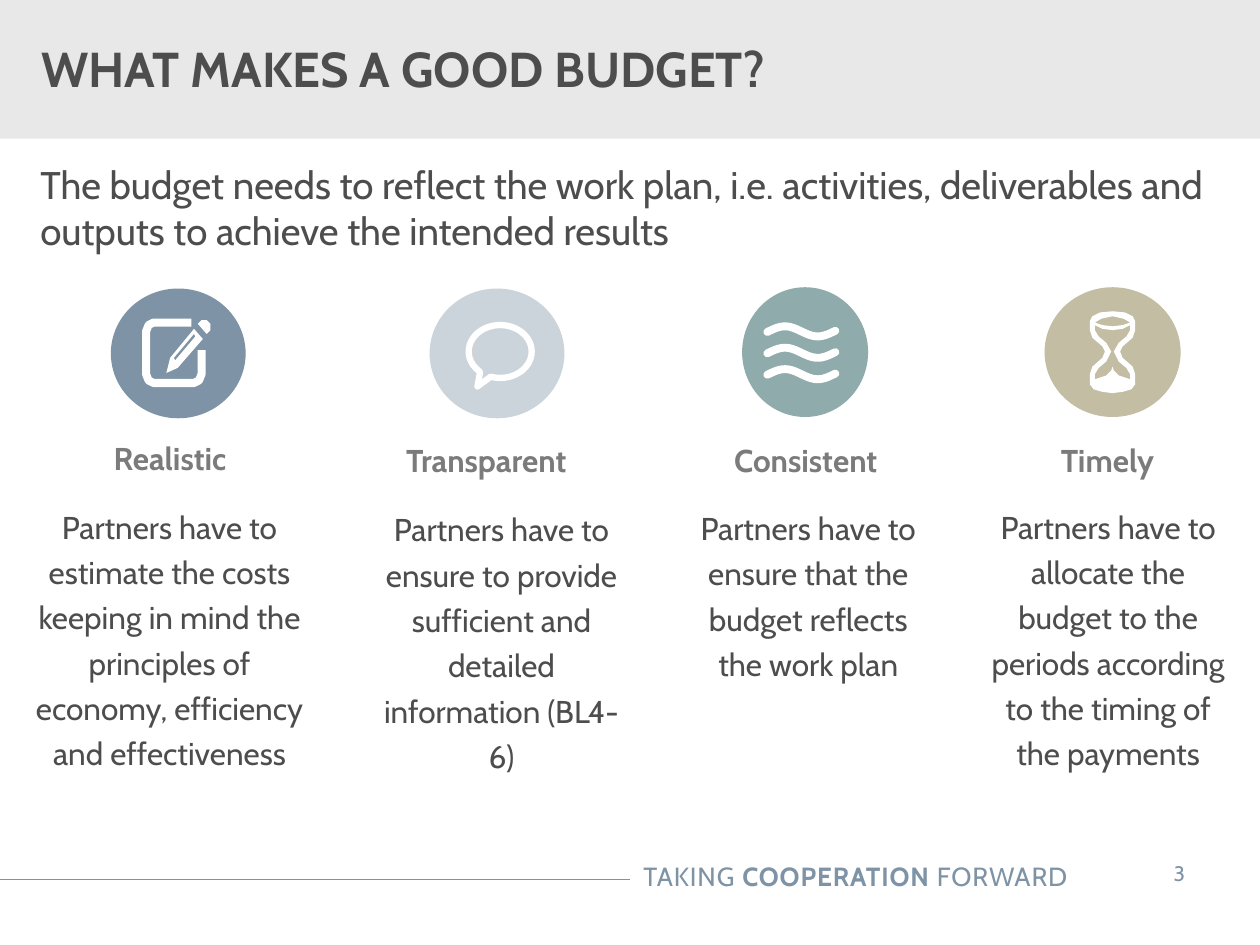
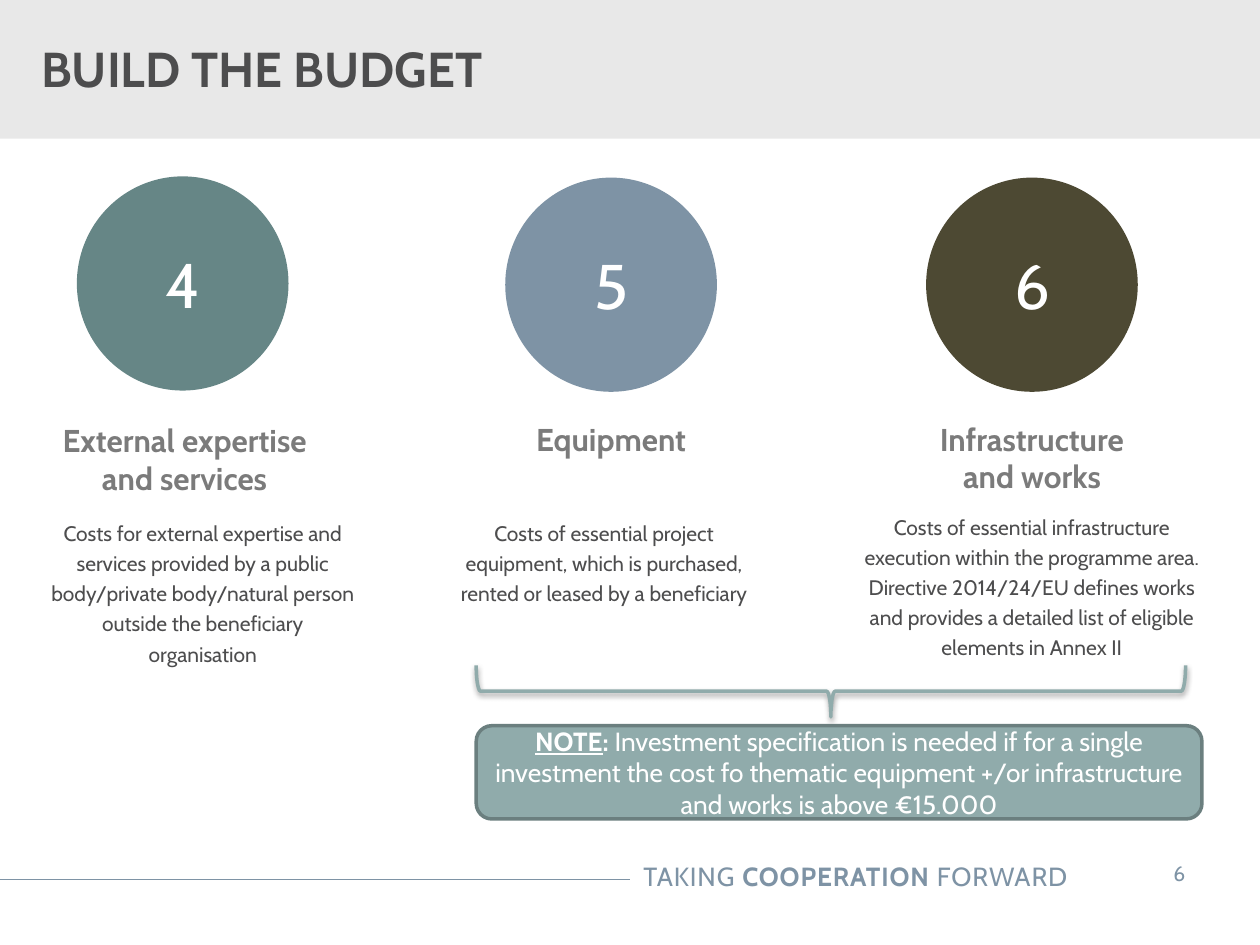
"""Build two slides on planning a good project budget."""
import math

from lxml import etree
from pptx import Presentation
from pptx.dml.color import RGBColor
from pptx.enum import shapes, text
from pptx.oxml import ns
from pptx.util import Inches, Pt

FONT = "Cabin"
COLORS = {
    "band": "E8E8E8", "text": "4D4D4E", "heading": "7B7B7B", "white": "FFFFFF",
    "blue": "7E93A5", "pale": "CBD4DB", "teal": "90ABAB", "sand": "C2BDA3",
    "green": "668686", "olive": "4D4933", "edge": "6B7F7F", "shadow": "000000",
}
SHAPE = shapes.MSO_SHAPE
LEFT, CENTER, RIGHT = text.PP_ALIGN.LEFT, text.PP_ALIGN.CENTER, text.PP_ALIGN.RIGHT
TIGHT = (0.08, 0.04)

TAGLINE = [("TAKING ", ""), ("COOPERATION", "b"), (" FORWARD", "")]
INTRO = ("The budget needs to reflect the work plan, i.e. activities, "
         "deliverables and outputs to achieve the intended results")
QUALITIES = [
    dict(name="Realistic", color="blue", circle=(0.88, 2.29, 1.07, 1.03),
         head=(0.27, 3.44, 2.16, 0.39), body=(0.15, 3.93, 2.39, 2.63),
         text="Partners have to estimate the costs keeping in mind the principles "
              "of economy, efficiency and effectiveness"),
    dict(name="Transparent", color="pale", circle=(3.41, 2.29, 1.07, 1.03),
         head=(2.78, 3.46, 2.16, 0.39), body=(2.92, 3.95, 2.12, 2.63),
         text="Partners have to ensure to provide sufficient and detailed "
              "information (BL4-6)"),
    dict(name="Consistent", color="teal", circle=(5.89, 2.28, 1, 1.03),
         head=(5.57, 3.46, 1.65, 0.39), body=(5.41, 3.94, 2.01, 1.54),
         text="Partners have to ensure that the budget reflects the work plan"),
    dict(name="Timely", color="sand", circle=(8.29, 2.28, 1.08, 1.03),
         head=(8.21, 3.46, 1.16, 0.39), body=(7.71, 3.93, 2.17, 2.27),
         text="Partners have to allocate the budget to the periods according to "
              "the timing of the payments"),
]
COST_LINES = [
    dict(number="4", name="External expertise and services", color="green",
         circle=(0.61, 1.4, 1.68, 1.7),
         head=(0.26, 3.3, 2.41, 0.69), body=(0.32, 4.05, 2.58, 1.64),
         text="Costs for external expertise and services provided by a public "
              "body/private body/natural person outside the beneficiary organisation"),
    dict(number="5", name="Equipment", color="blue", circle=(4.01, 1.41, 1.68, 1.7),
         head=(3.41, 3.29, 2.88, 0.39), body=(3.54, 4.05, 2.51, 1.05),
         text="Costs of essential project equipment, which is purchased, rented or "
              "leased by a beneficiary"),
    dict(number="6", name="Infrastructure\vand works", color="olive",
         circle=(7.35, 1.41, 1.68, 1.7),
         head=(6.75, 3.29, 2.88, 0.69), body=(6.75, 4, 2.88, 1.3),
         text="Costs of essential infrastructure execution within the programme "
              "area. Directive 2014/24/EU defines works and provides a detailed list "
              "of eligible elements in Annex II"),
]
NOTE = [("NOTE", "bu"), (": ", "b"),
        ("Investment specification is needed if for a single investment the cost fo "
         "thematic equipment +/or infrastructure and works is above €15.000", "")]

PAD = [(1.52, 2.56), (1.22, 2.56), (1.18, 2.58), (1.16, 2.63), (1.16, 2.97),
       (1.18, 3.02), (1.22, 3.04), (1.54, 3.04), (1.58, 3.02), (1.6, 2.97), (1.6, 2.78)]
PENCIL = [
    [(1.61, 2.69), (1.41, 2.92), (1.32, 2.96), (1.35, 2.84), (1.54, 2.61)],
    [(1.55, 2.67), (1.54, 2.65), (1.38, 2.84), (1.39, 2.86)],
    [(1.67, 2.57), (1.67, 2.62), (1.64, 2.65), (1.57, 2.57), (1.6, 2.54), (1.64, 2.54)],
]
HOURGLASS_X = 8.83
HOURGLASS_HALVES = [
    [(0, 2.47), (0.1, 2.48), (0.16, 2.51), (0.18, 2.55), (0.18, 2.62), (0.16, 2.68),
     (0.08, 2.75), (0.06, 2.79), (0.08, 2.84), (0.16, 2.91), (0.18, 2.97),
     (0.18, 3.05), (0.15, 3.09), (0.08, 3.11), (0, 3.12)],
    [(0, 2.51), (0.09, 2.53), (0.14, 2.56), (0.08, 2.58), (0, 2.59)],
    [(0, 2.62), (0.08, 2.61), (0.14, 2.58), (0.14, 2.62), (0.11, 2.67), (0.05, 2.72),
     (0.01, 2.79), (0.05, 2.87), (0.11, 2.92), (0.14, 2.97), (0.14, 3.01),
     (0.05, 2.98), (0.01, 2.94), (0, 2.91)],
]


def rgb(name):
    return RGBColor.from_string(COLORS[name])


def inches(values):
    return [Inches(v) for v in values]


def paint(sp, fill=None, line=None, width=0):
    sp.shadow.inherit = False
    if fill:
        sp.fill.solid()
        sp.fill.fore_color.rgb = rgb(fill)
    else:
        sp.fill.background()
    if line:
        sp.line.color.rgb = rgb(line)
        sp.line.width = Pt(width)
    else:
        sp.line.fill.background()
    return sp


def add_preset(s, kind, box, **style):
    return paint(s.shapes.add_shape(kind, *inches(box)), **style)


def add_outline(s, contours, close=True, **style):
    first, *rest = [[inches(pt) for pt in c] for c in contours]
    builder = s.shapes.build_freeform(*first[0])
    builder.add_line_segments(first[1:], close=close)
    for c in rest:
        builder.move_to(*c[0])
        builder.add_line_segments(c[1:], close=close)
    return paint(builder.convert_to_shape(), **style)


def write(sp, runs, size, color, align=CENTER, bold=False, inset=(0.1, 0.05),
          anchor=text.MSO_ANCHOR.TOP, spacing=None, tracking=None):
    tf = sp.text_frame
    tf.word_wrap = True
    tf.vertical_anchor = anchor
    tf.margin_left = tf.margin_right = Inches(inset[0])
    tf.margin_top = tf.margin_bottom = Inches(inset[1])
    p = tf.paragraphs[0]
    p.alignment = align
    if spacing:
        p.line_spacing = spacing
    if isinstance(runs, str):
        p.text = runs
    else:
        for words, marks in runs:
            r = p.add_run()
            r.text = words
            r.font.bold = "b" in marks
            r.font.underline = "u" in marks
    for r in p.runs:
        r.font.name = FONT
        r.font.size = Pt(size)
        r.font.color.rgb = rgb(color)
        if bold:
            r.font.bold = True
        if tracking:
            r.font._element.set("spc", str(tracking))


def add_text(s, box, runs, size, color, **style):
    write(s.shapes.add_textbox(*inches(box)), runs, size, color, **style)


def add_slide(prs, title, number):
    s = prs.slides.add_slide(prs.slide_layouts[6])
    rule = s.shapes.add_connector(shapes.MSO_CONNECTOR.STRAIGHT,
                                  *inches((0, 6.98, 5, 6.98)))
    rule.line.color.rgb = rgb("blue")
    rule.line.width = Pt(0.75)
    etree.SubElement(rule._element.spPr, ns.qn("a:effectLst"))
    add_preset(s, SHAPE.RECTANGLE, (0, 0, 10, 1.1), fill="band")
    add_text(s, (3.88, 6.78, 4.69, 0.35), TAGLINE, 15, "blue", align=RIGHT, tracking=50)
    add_text(s, (8.99, 6.73, 0.74, 0.4), number, 12, "blue", inset=(0.2, 0.1))
    add_text(s, (0.23, 0.16, 7, 0.75), title, 28, "text", align=LEFT, bold=True,
             anchor=text.MSO_ANCHOR.MIDDLE)
    return s


def add_column(s, item, size):
    circle = add_preset(s, SHAPE.OVAL, item["circle"], fill=item["color"])
    add_text(s, item["head"], item["name"], 18, "heading", bold=True, inset=TIGHT)
    add_text(s, item["body"], item["text"], size, "text", spacing=1.2, inset=TIGHT)
    return circle


def draw_notepad(s):
    add_outline(s, [PAD], close=False, line="white", width=4.6)
    add_outline(s, PENCIL, fill="white")


def draw_bubble(s):
    bubble = add_preset(s, SHAPE.OVAL_CALLOUT, (3.72, 2.58, 0.5, 0.42),
                        line="white", width=3.6)
    bubble.adjustments[0], bubble.adjustments[1] = -0.36, 0.66


def draw_waves(s):
    xs = [6.09 + 0.02 * i for i in range(28)]
    for middle in (2.63, 2.8, 2.97):
        wave = [(x, middle - 0.04 * math.cos(math.tau * (x - 6.23) / 0.52)) for x in xs]
        sp = add_outline(s, [wave], close=False, line="white", width=4.5)
        sp._element.spPr.find(ns.qn("a:ln")).set("cap", "rnd")


def draw_hourglass(s):
    contours = [[(HOURGLASS_X + dx, y) for dx, y in half]
                + [(HOURGLASS_X - dx, y) for dx, y in half[-2:0:-1]]
                for half in HOURGLASS_HALVES]
    add_outline(s, contours, fill="white")


def add_soft_shadow(sp):
    effects = sp._element.spPr.find(ns.qn("a:effectLst"))
    shadow = etree.SubElement(effects, ns.qn("a:outerShdw"), blurRad=str(Pt(3.1)),
                              dist=str(Pt(1.6)), dir="5400000", rotWithShape="0")
    color = etree.SubElement(shadow, ns.qn("a:srgbClr"), val=COLORS["shadow"])
    etree.SubElement(color, ns.qn("a:alpha"), val="38000")


def build_qualities(prs):
    s = add_slide(prs, "WHAT MAKES A GOOD BUDGET?", "3")
    add_text(s, (0.32, 1.28, 9.36, 0.8), INTRO, 22, "text", align=LEFT, inset=(0, 0))
    icons = (draw_notepad, draw_bubble, draw_waves, draw_hourglass)
    for item, draw_icon in zip(QUALITIES, icons):
        add_column(s, item, 18)
        draw_icon(s)


def build_cost_lines(prs):
    s = add_slide(prs, "BUILD THE BUDGET", "6")
    for item in COST_LINES:
        circle = add_column(s, item, 12)
        write(circle, item["number"], 36, "white", inset=TIGHT,
              anchor=text.MSO_ANCHOR.MIDDLE)
    brace = add_preset(s, SHAPE.LEFT_BRACE, (6.39, 2.67, 0.41, 5.63),
                       line="teal", width=2)
    brace.rotation = 270
    add_soft_shadow(brace)
    note = add_preset(s, SHAPE.ROUNDED_RECTANGLE, (3.78, 5.76, 5.76, 0.74),
                      fill="teal", line="edge", width=2)
    write(note, NOTE, 15, "white", anchor=text.MSO_ANCHOR.MIDDLE)


def main():
    prs = Presentation()
    prs.slide_width, prs.slide_height = Inches(10), Inches(7.5)
    build_qualities(prs)
    build_cost_lines(prs)
    prs.save("out.pptx")


if __name__ == "__main__":
    main()
